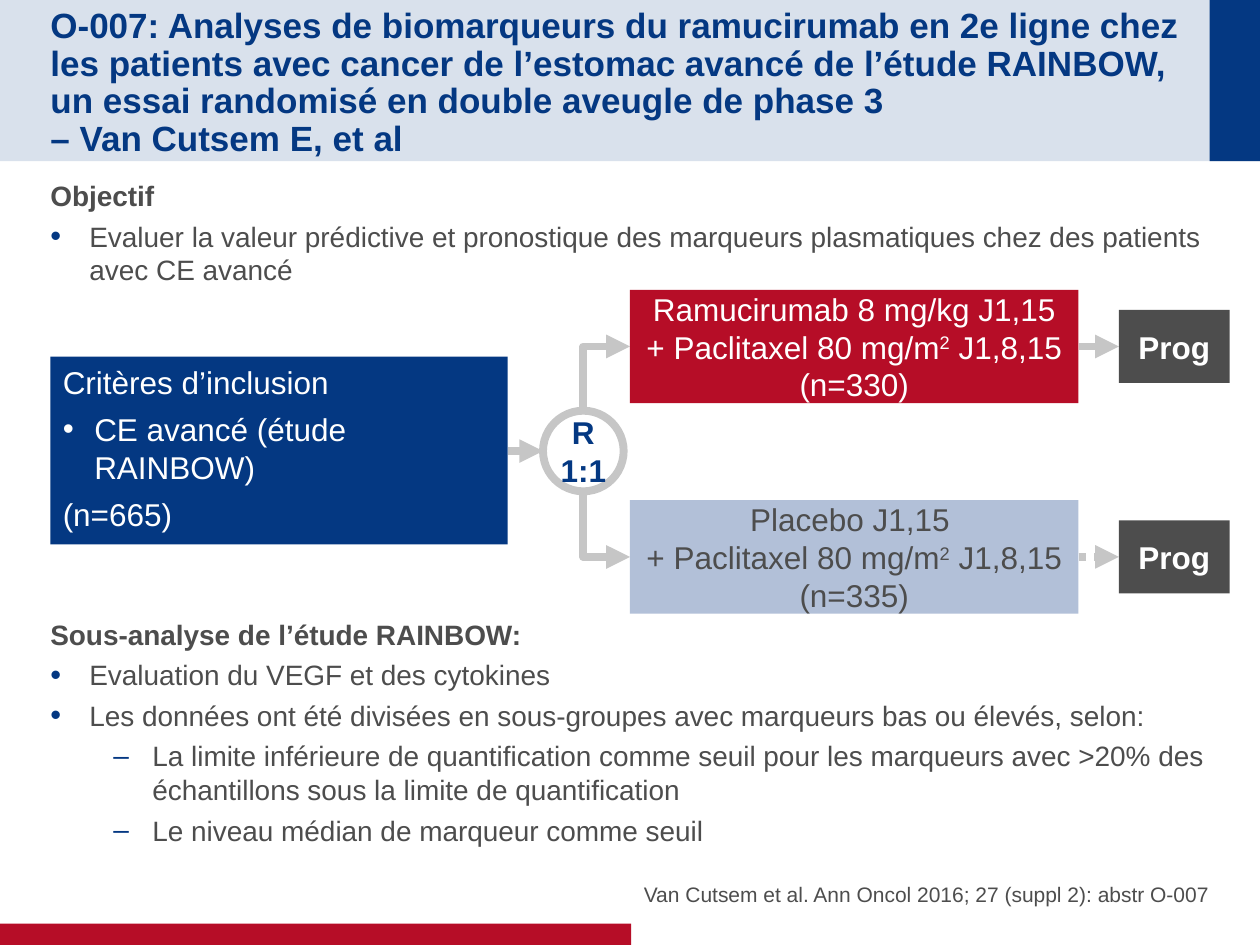
from lxml import etree
from pptx import Presentation
from pptx.dml.color import RGBColor
from pptx.enum.dml import MSO_LINE
from pptx.enum.shapes import MSO_CONNECTOR, MSO_SHAPE
from pptx.enum.text import MSO_ANCHOR, PP_ALIGN
from pptx.oxml.ns import qn
from pptx.util import Inches, Pt

NAVY = RGBColor(0x04, 0x38, 0x82)
RED = RGBColor(0xB6, 0x0D, 0x27)
PALE_BLUE = RGBColor(0xB2, 0xC0, 0xD8)
GRAY = RGBColor(0x4D, 0x4D, 0x4D)
LIGHT_GRAY = RGBColor(0xC6, 0xC6, 0xC6)
WHITE = RGBColor(0xFF, 0xFF, 0xFF)

RECTANGLE, OVAL = MSO_SHAPE.RECTANGLE, MSO_SHAPE.OVAL
STRAIGHT, ELBOW = MSO_CONNECTOR.STRAIGHT, MSO_CONNECTOR.ELBOW
LEFT, CENTER, RIGHT = PP_ALIGN.LEFT, PP_ALIGN.CENTER, PP_ALIGN.RIGHT
TOP, MIDDLE, BOTTOM = MSO_ANCHOR.TOP, MSO_ANCHOR.MIDDLE, MSO_ANCHOR.BOTTOM

presentation = Presentation()
presentation.slide_width = Inches(10)
presentation.slide_height = Inches(7.5)
slide = presentation.slides.add_slide(presentation.slide_layouts[6])

# The grid has 100 columns and 75 rows.
COLUMN = presentation.slide_width / 100
ROW = presentation.slide_height / 75


def add_block(left, top, width, height, fill=None, kind=RECTANGLE):
    """Add a borderless shape placed in grid columns and rows."""
    shape = slide.shapes.add_shape(
        kind, round(left * COLUMN), round(top * ROW), round(width * COLUMN), round(height * ROW))
    shape.shadow.inherit = False
    shape.line.fill.background()
    if fill is None:
        shape.fill.background()
    else:
        shape.fill.solid()
        shape.fill.fore_color.rgb = fill
    return shape


def write(shape, items, size, color, align=LEFT, anchor=MIDDLE, insets=(0, 0, 0, 0),
          bold=False, after=0, bullet_color=NAVY):
    """Fill a shape with (style, text) items; carets enclose superscripts."""
    frame = shape.text_frame
    frame.word_wrap = True
    frame.vertical_anchor = anchor
    frame.margin_left, frame.margin_top, frame.margin_right, frame.margin_bottom = map(Inches, insets)
    for index, (style, text) in enumerate(items):
        paragraph = frame.paragraphs[0] if index == 0 else frame.add_paragraph()
        paragraph.alignment = align
        paragraph.space_after = Pt(after)
        first, *others = text.split("^")
        paragraph.text = first
        for position, piece in enumerate(others):
            run = paragraph.add_run()
            run.text = piece
            if position % 2 == 0:
                run.font._element.set("baseline", "30000")
        for run in paragraph.runs:
            run.font.name = "Arial"
            run.font.size = Pt(size)
            run.font.bold = bold or style == "heading"
            run.font.color.rgb = color
        if style in BULLETS:
            symbol, indent, hanging, percent = BULLETS[style]
            properties = paragraph._p.get_or_add_pPr()
            properties.set("marL", str(Inches(indent)))
            properties.set("indent", str(-Inches(hanging)))
            color_element = etree.SubElement(properties, qn("a:buClr"))
            etree.SubElement(color_element, qn("a:srgbClr"), val=str(bullet_color))
            etree.SubElement(properties, qn("a:buSzPct"), val=str(percent * 1000))
            etree.SubElement(properties, qn("a:buFont"), typeface="Arial")
            etree.SubElement(properties, qn("a:buChar"), char=symbol)


# Style: symbol, left indent, hanging indent, size in percent
BULLETS = {
    "bullet": ("•", 0.31, 0.31, 110),
    "dash": ("–", 0.81, 0.31, 100),
    "criterion": ("•", 0.25, 0.25, 100),
}

# Title band and footer bar
title_band = add_block(0, 0, 100, 12.8, NAVY)
band_color = title_band.fill._xPr.find(qn("a:solidFill"))[0]
etree.SubElement(band_color, qn("a:alpha"), val="15000")
add_block(96, 0, 4, 12.8, NAVY)
add_block(0, 73.3, 50.1, 1.7, RED)

title = add_block(4, 2, 90.1, 8.8)
write(title, [("plain", "O-007: Analyses de biomarqueurs du ramucirumab en 2e ligne chez les patients "
                        "avec cancer de l’estomac avancé de l’étude RAINBOW, un essai randomisé en "
                        "double aveugle de phase 3 \n– Van Cutsem E, et al")],
      20, NAVY, insets=(0, 0.05, 0, 0), bold=True)
title.text_frame.paragraphs[0].line_spacing = 0.9

# Body text above and below the study diagram
body_sections = [
    (13.7, 9.3, [
        ("heading", "Objectif"),
        ("bullet", "Evaluer la valeur prédictive et pronostique des marqueurs plasmatiques "
                   "chez des patients avec CE avancé"),
    ]),
    (48.5, 20, [
        ("heading", "Sous-analyse de l’étude RAINBOW:"),
        ("bullet", "Evaluation du VEGF et des cytokines"),
        ("bullet", "Les données ont été divisées en sous-groupes avec marqueurs bas ou élevés, selon:"),
        ("dash", "La limite inférieure de quantification comme seuil pour les marqueurs avec "
                 ">20% des échantillons sous la limite de quantification"),
        ("dash", "Le niveau médian de marqueur comme seuil"),
    ]),
]
for top, height, items in body_sections:
    write(add_block(4, top, 92, height), items, 16, GRAY,
          anchor=TOP, insets=(0, 0.05, 0, 0.05), after=4)

write(add_block(50.8, 66.7, 45.2, 5.3),
      [("plain", "Van Cutsem et al. Ann Oncol 2016; 27 (suppl 2): abstr O-007")],
      12, GRAY, align=RIGHT, anchor=BOTTOM)

# Study diagram: connectors run between the nodes
CIRCLE_X, CIRCLE_Y, RADIUS = 46.3, 35.8, 3.2
ARM_LEFT, ARM_WIDTH, ARM_HEIGHT = 50, 35.6, 9
ARM_RIGHT = ARM_LEFT + ARM_WIDTH
PROG_LEFT, PROG_WIDTH, PROG_HEIGHT = 88.8, 8.8, 5.8

arms = [
    (27.5, -1, RED, WHITE, None,
     "Ramucirumab 8 mg/kg J1,15 + Paclitaxel 80 mg/m^2^ J1,8,15 (n=330)"),
    (44.2, 1, PALE_BLUE, GRAY, MSO_LINE.ROUND_DOT,
     "Placebo J1,15 \n+ Paclitaxel 80 mg/m^2^ J1,8,15 (n=335)"),
]

# Kind, begin x, begin y, end x, end y, rotation, dash
links = [(STRAIGHT, 40.3, CIRCLE_Y, CIRCLE_X - RADIUS, CIRCLE_Y, 0, None)]
for center, side, fill, color, dash, text in arms:
    links.append((STRAIGHT, ARM_RIGHT, center, PROG_LEFT, center, 0, dash))
    # An elbow is laid out on its side, then turned about its centre.
    start = CIRCLE_Y + side * RADIUS
    half_width = abs(center - start) / 2
    half_height = (ARM_LEFT - CIRCLE_X) / 2
    middle_x, middle_y = (CIRCLE_X + ARM_LEFT) / 2, (start + center) / 2
    links.append((ELBOW, middle_x + half_width, middle_y - side * half_height,
                  middle_x - half_width, middle_y + side * half_height, 180 + side * 90, None))

for kind, begin_x, begin_y, end_x, end_y, rotation, dash in links:
    connector = slide.shapes.add_connector(
        kind, round(begin_x * COLUMN), round(begin_y * ROW), round(end_x * COLUMN), round(end_y * ROW))
    connector.line.color.rgb = LIGHT_GRAY
    connector.line.width = Pt(4.5)
    if dash is not None:
        connector.line.dash_style = dash
    properties = connector._element.spPr
    if kind == ELBOW:
        properties.find(qn("a:prstGeom")).set("prst", "bentConnector2")
        properties.find(qn("a:xfrm")).set("rot", str(rotation * 60000))
    etree.SubElement(properties.find(qn("a:ln")), qn("a:tailEnd"), type="triangle")
    etree.SubElement(properties, qn("a:effectLst"))

for center, side, fill, color, dash, text in arms:
    arm = add_block(ARM_LEFT, center - ARM_HEIGHT / 2, ARM_WIDTH, ARM_HEIGHT, fill)
    write(arm, [("plain", text)], 18, color, align=CENTER, insets=(0.1, 0, 0.1, 0))
    progression = add_block(PROG_LEFT, center - PROG_HEIGHT / 2, PROG_WIDTH, PROG_HEIGHT, GRAY)
    write(progression, [("plain", "Prog")], 18, WHITE, align=CENTER,
          insets=(0.1, 0, 0.1, 0), bold=True)

randomisation = add_block(CIRCLE_X - RADIUS, CIRCLE_Y - RADIUS, 2 * RADIUS, 2 * RADIUS, kind=OVAL)
randomisation.line.color.rgb = LIGHT_GRAY
randomisation.line.width = Pt(4.5)
write(randomisation, [("plain", "R"), ("plain", "1:1")], 18, NAVY, align=CENTER, bold=True)
randomisation.text_frame.word_wrap = False

inclusion = add_block(4, 28.3, 36.3, 14.9, NAVY)
write(inclusion, [("plain", "Critères d’inclusion"), ("criterion", "CE avancé (étude RAINBOW)"),
                  ("plain", "(n=665)")],
      18, WHITE, anchor=TOP, insets=(0.1, 0.05, 0.1, 0.05), after=5.4, bullet_color=WHITE)

presentation.save("out.pptx")
